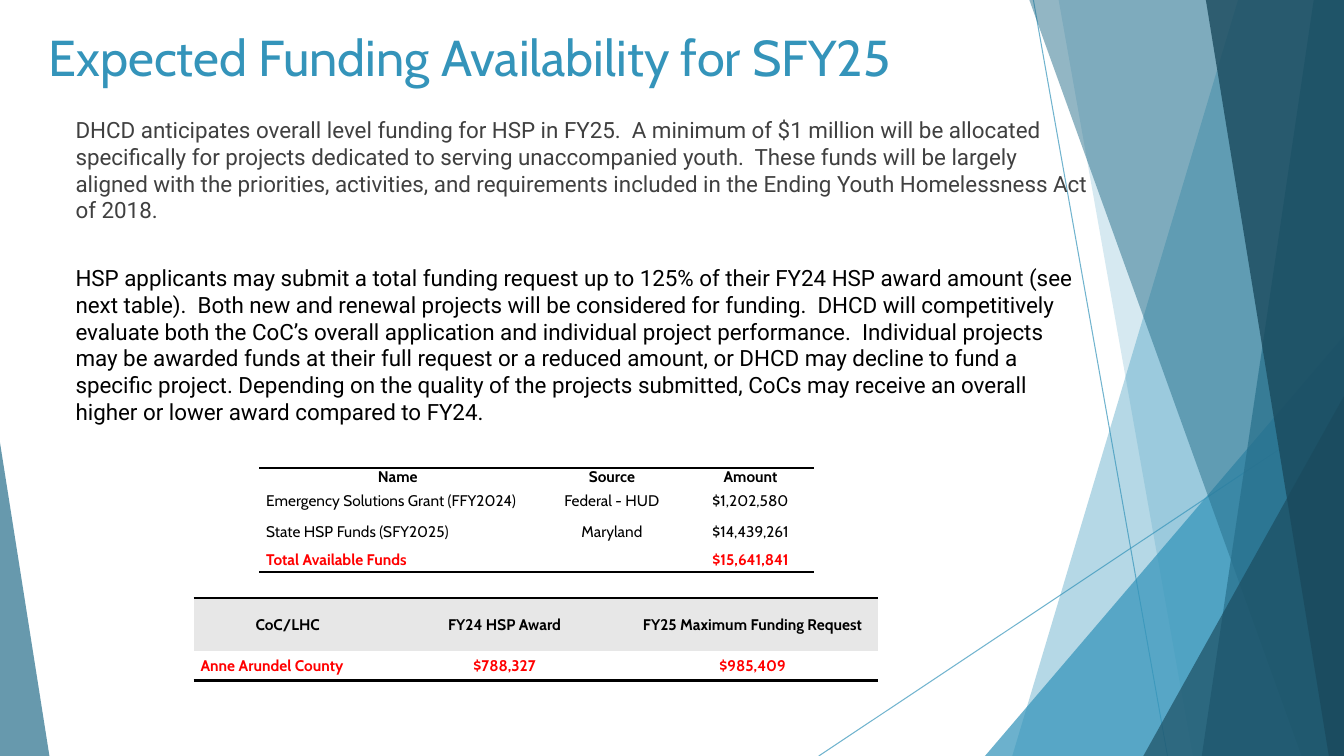
from dataclasses import dataclass

from lxml import etree
from pptx import Presentation
from pptx.dml.color import RGBColor
from pptx.enum.shapes import MSO_CONNECTOR, MSO_SHAPE
from pptx.enum.text import MSO_ANCHOR, PP_ALIGN
from pptx.oxml.ns import qn
from pptx.util import Inches, Pt

STRAIGHT = MSO_CONNECTOR.STRAIGHT
TRIANGLE = MSO_SHAPE.ISOSCELES_TRIANGLE
MIDDLE, TOP = MSO_ANCHOR.MIDDLE, MSO_ANCHOR.TOP
LEFT, CENTER = PP_ALIGN.LEFT, PP_ALIGN.CENTER

BLUE, TEAL, NAVY = "3494BA", "276F8B", "1A4A5D"
BLACK, GREY, WHITE, RED, HEADER = "000000", "404040", "FFFFFF", "FF0000", "E7E7E7"
HEADING_FONT, BODY_FONT = "Cabin", "Roboto"
NO_STYLE = "{2D5ABB26-0587-4C30-8999-92F81FD0307C}"

prs = Presentation()
prs.slide_width, prs.slide_height = Inches(13.33), Inches(7.5)
slide = prs.slides.add_slide(prs.slide_layouts[6])


# All positions and sizes are percentages of the slide's width or height.
def col(share: float) -> int:
    return round(prs.slide_width * share / 100)


def row(share: float) -> int:
    return round(prs.slide_height * share / 100)


@dataclass
class Ray:
    x1: float
    y1: float
    x2: float
    y2: float


@dataclass
class Panel:
    """Full-height band reaching the right edge, with a slanted left side."""
    top_x: float
    bottom_x: float
    color: str
    alpha: int


@dataclass
class Wedge:
    """Right triangle standing on the bottom edge."""
    x: float
    y: float
    width: float
    apex: float
    color: str
    alpha: int


@dataclass
class Grid:
    x: float
    y: float
    cols: list[float]
    rows: list[float]
    header_fill: str
    cells: list[list[str]]


def rgb(value: str) -> RGBColor:
    return RGBColor.from_string(value)


def set_alpha(color_format_parent, percent: int) -> None:
    clr = color_format_parent.find(".//" + qn("a:srgbClr"))
    etree.SubElement(clr, qn("a:alpha"), val=str(percent * 1000))


def style_run(r, size: float, font: str, color: str, bold: bool = False) -> None:
    r.font.size, r.font.name, r.font.bold = Pt(size), font, bold
    r.font.color.rgb = rgb(color)


def draw_ray(ray: Ray) -> None:
    line = slide.shapes.add_connector(
        STRAIGHT, col(ray.x1), row(ray.y1), col(ray.x2), row(ray.y2))
    line.line.color.rgb, line.line.width = rgb(BLUE), Pt(0.75)
    sp_pr = line._element.spPr
    set_alpha(sp_pr, 70)
    etree.SubElement(sp_pr, qn("a:effectLst"))


def draw_facet(facet: Panel | Wedge) -> None:
    if isinstance(facet, Panel):
        outline = slide.shapes.build_freeform(col(facet.top_x), 0)
        outline.add_line_segments(
            [(col(100), 0), (col(100), row(100)), (col(facet.bottom_x), row(100))])
        sp = outline.convert_to_shape()
    else:
        sp = slide.shapes.add_shape(TRIANGLE, col(facet.x), row(facet.y),
                                    col(facet.width), row(100 - facet.y))
        sp.adjustments[0] = facet.apex
    sp.shadow.inherit = False
    sp.fill.solid()
    sp.fill.fore_color.rgb = rgb(facet.color)
    set_alpha(sp._element.spPr, facet.alpha)
    sp.line.fill.background()


def add_text(x: float, y: float, w: float, h: float, anchor):
    tf = slide.shapes.add_textbox(col(x), row(y), col(w), row(h)).text_frame
    tf.word_wrap, tf.vertical_anchor = True, anchor
    tf.margin_left = tf.margin_right = Inches(0.13)
    tf.margin_top = tf.margin_bottom = Inches(0.07)
    return tf


def add_rule(cell, side: str) -> None:
    ln = etree.Element(qn(f"a:{side}"), w=str(Pt(2)))
    fill = etree.SubElement(ln, qn("a:solidFill"))
    etree.SubElement(fill, qn("a:srgbClr"), val=BLACK)
    cell._tc.get_or_add_tcPr().insert(0, ln)


def draw_table(grid: Grid) -> None:
    table = slide.shapes.add_table(
        len(grid.rows), len(grid.cols), col(grid.x), row(grid.y),
        col(sum(grid.cols)), row(sum(grid.rows))).table
    table.first_row = table.horz_banding = False
    table._tbl.tblPr.find(qn("a:tableStyleId")).text = NO_STYLE
    for column, width in zip(table.columns, grid.cols):
        column.width = col(width)
    last = len(grid.rows) - 1
    for i, (height, texts) in enumerate(zip(grid.rows, grid.cells)):
        table.rows[i].height = row(height)
        for j, text in enumerate(texts):
            cell = table.cell(i, j)
            cell.margin_left = cell.margin_right = Inches(0.07)
            cell.margin_top = cell.margin_bottom = 0
            cell.vertical_anchor = MIDDLE
            cell.fill.solid()
            cell.fill.fore_color.rgb = rgb(WHITE if i else grid.header_fill)
            if i in (0, last):
                add_rule(cell, "lnB" if i else "lnT")
            p = cell.text_frame.paragraphs[0]
            p.text = text
            p.alignment = LEFT if i and j == 0 else CENTER
            p.font.size = Pt(11)
            for r in p.runs:
                style_run(r, 11, HEADING_FONT, RED if i == last else BLACK, i in (0, last))
    # An empty second cell in the closing row joins the label
    if not grid.cells[last][1]:
        table.cell(last, 0).merge(table.cell(last, 1))


# Background rays and facets
for ray in (Ray(76.89, 0, 86.87, 100), Ray(100, 53.73, 60.92, 100)):
    draw_ray(ray)

for facet in (
    Panel(92.12, 75.32, BLUE, 36),
    Panel(78.77, 88.75, BLUE, 20),
    Wedge(73.29, 44.4, 26.71, 1, BLUE, 72),
    Panel(76.59, 96.85, TEAL, 50),
    Panel(97.75, 89.42, TEAL, 70),
    Panel(89.72, 98.87, NAVY, 80),
    Wedge(85.07, 52.4, 14.93, 1, NAVY, 66),
    Wedge(0, 58.53, 3.68, 0, TEAL, 70),
):
    draw_facet(facet)

# Title
p = add_text(2.63, 4.53, 74.57, 5.73, MIDDLE).paragraphs[0]
p.text = "Expected Funding Availability for SFY25"
style_run(p.runs[0], 36, HEADING_FONT, BLUE)

# Body
BODY = (
    ("DHCD anticipates overall level funding for HSP in FY25.  A minimum of $1 million will be "
     "allocated specifically for projects dedicated to serving unaccompanied youth.  These funds "
     "will be largely aligned with the priorities, activities, and requirements included in the "
     "Ending Youth Homelessness Act of 2018.", GREY, 0),
    ("HSP applicants may submit a total funding request up to 125% of their FY24 HSP award amount "
     "(see next table).  Both new and renewal projects will be considered for funding.  DHCD will "
     "competitively evaluate both the CoC’s overall application and individual project "
     "performance.  Individual projects may be awarded funds at their full request or a reduced "
     "amount, or DHCD may decline to fund a specific project. Depending on the quality of the "
     "projects submitted, CoCs may receive an overall higher or lower award compared to FY24.",
     BLACK, 29),
)
tf = add_text(4.05, 14.4, 77.94, 66, TOP)
for i, (text, color, space) in enumerate(BODY):
    p = tf.add_paragraph() if i else tf.paragraphs[0]
    p.text = text
    p.space_before = Pt(space)
    p._p.get_or_add_pPr().set("marL", str(Inches(0.08)))
    style_run(p.runs[0], 16, BODY_FONT, color)

# Funding sources and county award tables
draw_table(Grid(19.28, 61.87, [20.63, 11.25, 9.38], [2.4, 4, 4.13, 3.2], WHITE, [
    ["Name", "Source", "Amount"],
    ["Emergency Solutions Grant (FFY2024)", "Federal - HUD", "$1,202,580"],
    ["State HSP Funds (SFY2025)", "Maryland", "$14,439,261"],
    ["Total Available Funds", "", "$15,641,841"],
]))
draw_table(Grid(14.4, 79.07, [14.03, 18.23, 18.68], [7.07, 3.87], HEADER, [
    ["CoC/LHC", "FY24 HSP Award", "FY25 Maximum Funding Request"],
    ["Anne Arundel County", "$788,327", "$985,409"],
]))

prs.save("out.pptx")
